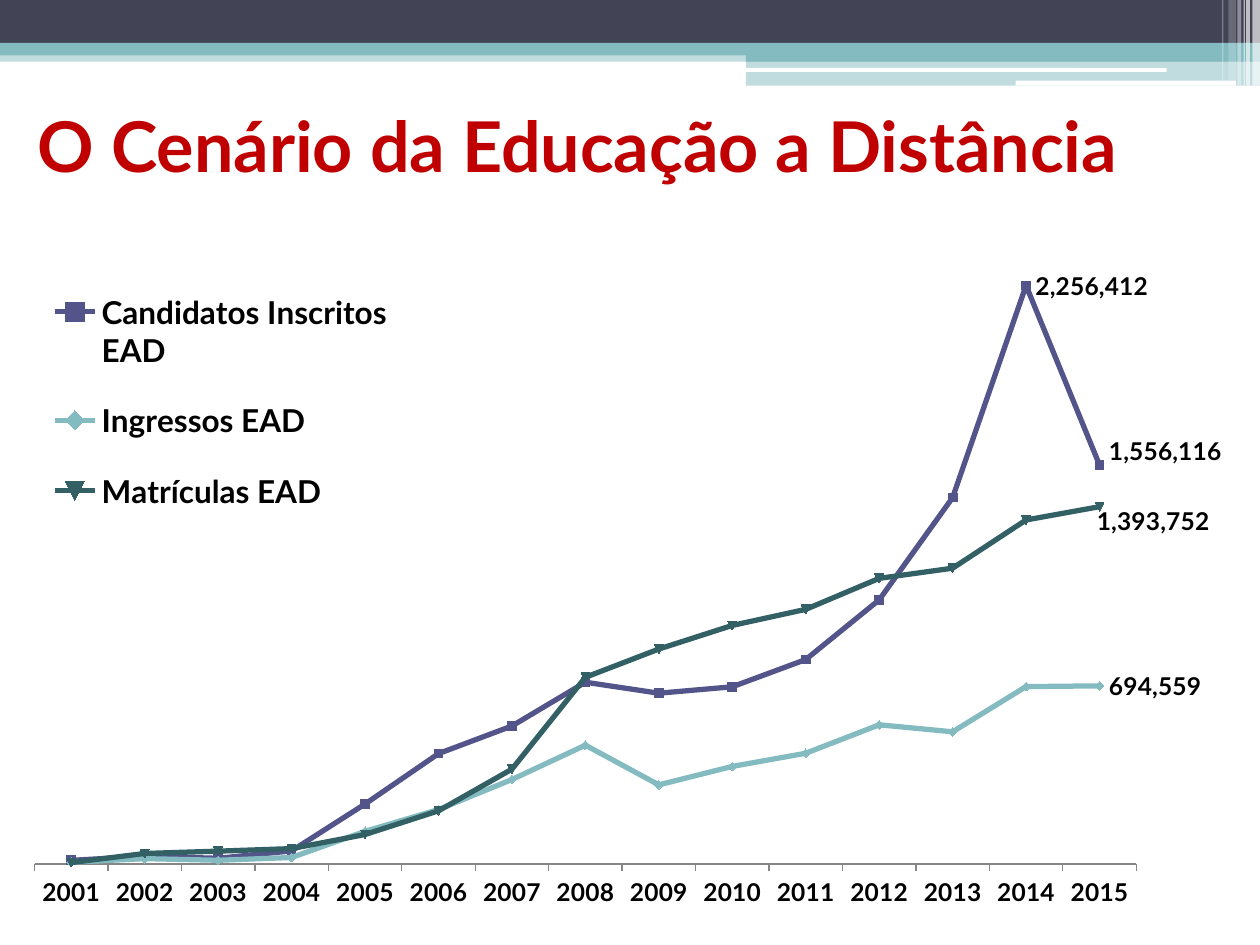
from lxml.etree import SubElement
from pptx import Presentation
from pptx.chart.data import CategoryChartData
from pptx.dml.color import RGBColor
from pptx.enum.chart import XL_CHART_TYPE, XL_LABEL_POSITION, XL_LEGEND_POSITION, XL_TICK_LABEL_POSITION, XL_TICK_MARK
from pptx.enum.shapes import MSO_SHAPE
from pptx.enum.text import MSO_ANCHOR, MSO_AUTO_SIZE, PP_ALIGN
from pptx.oxml import parse_xml
from pptx.oxml.ns import nsdecls, qn
from pptx.util import Inches, Pt

FONT = "Lato"
NAVY, TEAL, WHITE, BLACK = "424456", "83BBC1", "FFFFFF", "000000"

BANDS = [
    (0, 0.4, 10, 0.09, TEAL, 50),
    (0, 0, 10, 0.34, NAVY, 100),
    (0, 0.34, 10, 0.1, TEAL, 100),
    (5.92, 0.39, 4.08, 0.1, TEAL, 100),
    (5.92, 0.48, 4.08, 0.2, TEAL, 50),
]
ROUNDED_BARS = [
    (5.91, 0.54, 3.35, 0.03, WHITE, 100),
    (8.06, 0.64, 1.75, 0.04, WHITE, 100),
]
STRIPES = [
    (9.94, 0, 0.06, 0.68, WHITE, 65),
    (9.89, 0, 0.03, 0.68, WHITE, 65),
    (9.87, 0, 0.01, 0.68, WHITE, 60),
    (9.82, 0, 0.03, 0.68, WHITE, 40),
    (9.75, 0, 0.06, 0.64, WHITE, 20),
    (9.7, 0, 0.01, 0.64, WHITE, 30),
]

YEARS = [str(year) for year in range(2001, 2016)]
SERIES = [
    ("Candidatos Inscritos EAD", "53548A",
     [13967, 29702, 21873, 50706, 233626, 430229, 537959, 708784, 665839,
      690921, 797176, 1029981, 1429360, 2256412, 1556116],
     {13: (0, 0), 14: (0, -0.02)}),
    ("Ingressos EAD", TEAL,
     [6618, 20685, 14233, 25006, 127014, 212246, 329271, 463093, 308340,
      380328, 431597, 542633, 515405, 691731, 694559],
     {14: (0, 0)}),
    ("Matrículas EAD", "326064",
     [5359, 40714, 49911, 59611, 114642, 207206, 369766, 727961, 838125,
      930179, 992927, 1113850, 1153572, 1341842, 1393752],
     {14: (-0.01, 0.02)}),
]


def color(value):
    """Turn a hex string into a colour."""
    return RGBColor.from_string(value)


def set_values(target, values):
    """Set each named attribute of the target."""
    for name, value in values.items():
        setattr(target, name, value)


def set_font(font, size, bold=False, fill=BLACK):
    """Format a font in the deck's typeface."""
    set_values(font, {"name": FONT, "size": Pt(size), "bold": bold})
    font.color.rgb = color(fill)


def add_bar(page, kind, left, top, width, height, fill, opacity):
    """Add one borderless bar of the header."""
    bar = page.shapes.add_shape(kind, Inches(left), Inches(top), Inches(width), Inches(height))
    bar.shadow.inherit = False
    bar.line.fill.background()
    bar.fill.solid()
    bar.fill.fore_color.rgb = color(fill)
    if opacity < 100:
        tint = bar.fill._xPr.find(".//" + qn("a:srgbClr"))
        SubElement(tint, qn("a:alpha")).set("val", str(opacity * 1000))


def add_header(page):
    """Draw the bands, rounded bars and stripes along the top."""
    groups = [(MSO_SHAPE.RECTANGLE, BANDS), (MSO_SHAPE.ROUNDED_RECTANGLE, ROUNDED_BARS),
              (MSO_SHAPE.RECTANGLE, STRIPES)]
    for kind, bars in groups:
        for bar in bars:
            add_bar(page, kind, *bar)


def add_title(page, text):
    """Place and format the title."""
    title = page.shapes.title
    set_values(title, {"left": Inches(0.2), "top": Inches(0.68),
                       "width": Inches(9.69), "height": Inches(0.94)})
    set_values(title.text_frame, {"text": text, "word_wrap": True,
                                  "auto_size": MSO_AUTO_SIZE.NONE,
                                  "vertical_anchor": MSO_ANCHOR.MIDDLE})
    para = title.text_frame.paragraphs[0]
    para.alignment = PP_ALIGN.LEFT
    set_font(para.runs[0].font, 40, True, "C00000")


def set_layout(element, index, values):
    """Give a chart part a manual layout as its child at the index."""
    for old in element.findall(qn("c:layout")):
        element.remove(old)
    layout = parse_xml(f"<c:layout {nsdecls('c')}><c:manualLayout/></c:layout>")
    for name, value in values.items():
        SubElement(layout[0], qn(f"c:{name}")).set("val", str(value))
    element.insert(index, layout)


def format_series(series, fill, labels):
    """Style a line and label its chosen points."""
    series.smooth = False
    series.marker.style = None
    series.format.line.width = Pt(3)
    series.format.line.color.rgb = color(fill)
    series.data_labels.show_value = False
    for index, (shift_x, shift_y) in labels.items():
        label = series.points[index].data_label
        set_font(label.font, 14, True)
        label.position = XL_LABEL_POSITION.RIGHT
        if shift_x or shift_y:
            element = series._element.xpath(f"c:dLbls/c:dLbl[c:idx/@val='{index}']")[0]
            set_layout(element, 1, {"x": shift_x, "y": shift_y})


def format_axes(chart):
    """Show only the year axis and fix the value range."""
    set_values(chart.value_axis, {"visible": False, "has_major_gridlines": False,
                                  "minimum_scale": 0, "maximum_scale": 2500000})
    years = chart.category_axis
    set_values(years, {"has_major_gridlines": False, "major_tick_mark": XL_TICK_MARK.OUTSIDE,
                       "tick_label_position": XL_TICK_LABEL_POSITION.LOW})
    years.format.line.color.rgb = color("868686")
    set_font(years.tick_labels.font, 14, True)


def add_line_chart(page):
    """Add the enrolment chart with its legend."""
    data = CategoryChartData(number_format="#,##0")
    data.categories = YEARS
    for name, _, values, _ in SERIES:
        data.add_series(name, values)
    chart = page.shapes.add_chart(XL_CHART_TYPE.LINE, Inches(0.12), Inches(1.62),
                                  Inches(9.61), Inches(5.59), data).chart
    set_font(chart.font, 10)
    set_values(chart, {"has_title": False, "has_legend": True})
    chart.plots[0].vary_by_categories = False
    for series, (_, fill, _, labels) in zip(chart.plots[0].series, SERIES):
        format_series(series, fill, labels)
    format_axes(chart)
    set_values(chart.legend, {"position": XL_LEGEND_POSITION.RIGHT, "include_in_layout": False})
    set_font(chart.legend.font, 18, True)
    set_layout(chart.legend._element, 1, {"xMode": "edge", "yMode": "edge",
                                          "x": 0.02, "y": 0.08, "w": 0.3, "h": 0.4})
    plot_area = chart._chartSpace.chart.plotArea
    set_layout(plot_area, 0, {"layoutTarget": "inner", "xMode": "edge", "yMode": "edge",
                              "x": 0.016, "y": 0.027, "w": 0.91, "h": 0.91})


def main():
    """Build and save the slide."""
    deck = Presentation()
    set_values(deck, {"slide_width": Inches(10), "slide_height": Inches(7.5)})
    page = deck.slides.add_slide(deck.slide_layouts[5])
    add_header(page)
    add_title(page, "O Cenário da Educação a Distância")
    add_line_chart(page)
    deck.save("out.pptx")


if __name__ == "__main__":
    main()
